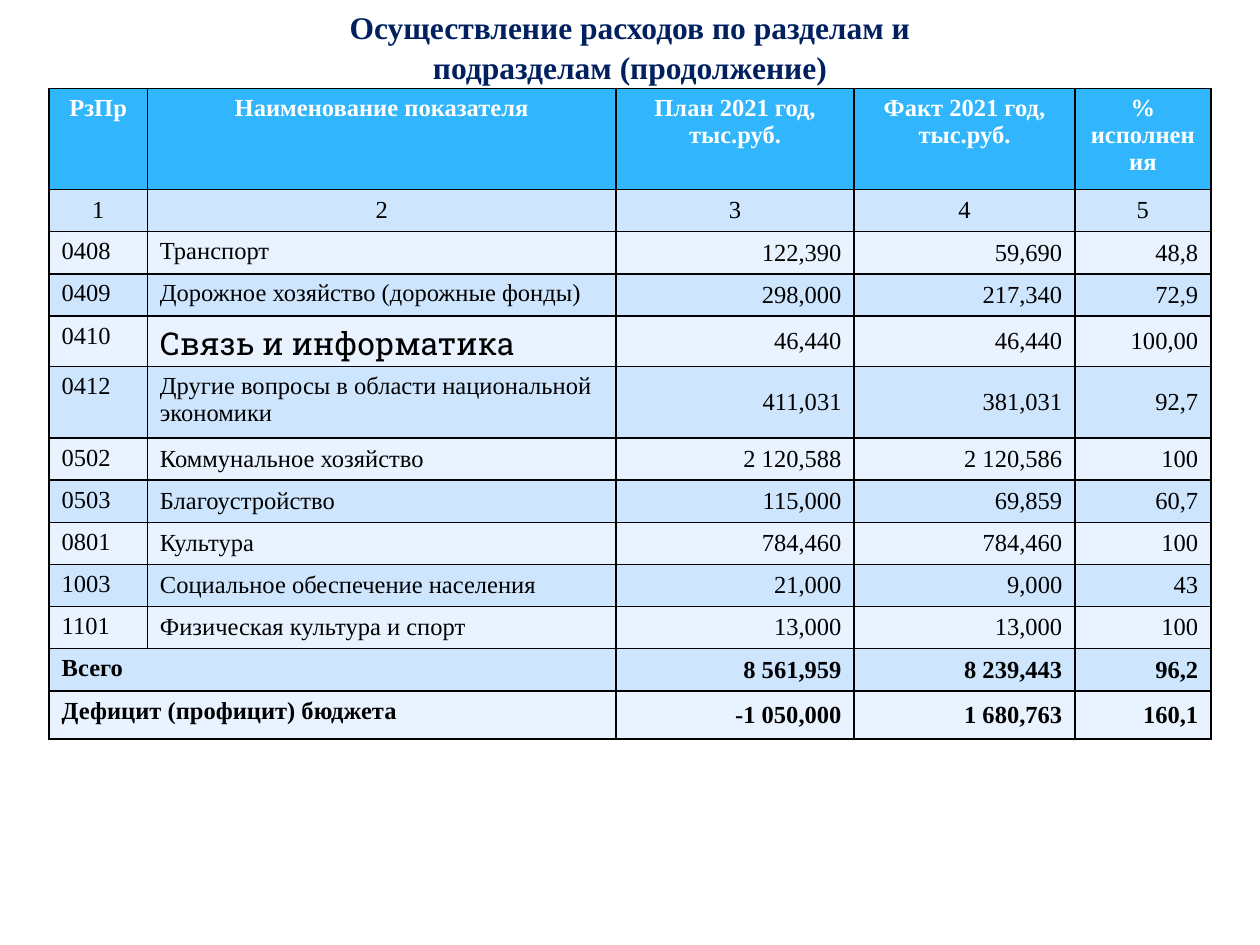
from dataclasses import dataclass

import pptx
import pptx.dml.color
import pptx.enum.text
import pptx.util
from lxml import etree
from pptx.oxml.ns import qn
from pptx.util import Cm, Pt

ALIGN = pptx.enum.text.PP_ALIGN
ANCHOR = pptx.enum.text.MSO_ANCHOR


@dataclass(frozen=True)
class Theme:
    title: str = "002060"
    header_fill: str = "31B6FD"
    header_text: str = "FFFFFF"
    band_dark: str = "CEE5FE"
    band_light: str = "E8F3FF"
    text: str = "000000"
    border: str = "000000"
    font: str = "Times New Roman"
    accent_font: str = "Roboto Slab"
    body_size: int = 14
    large_size: int = 18
    border_width: int = 1


THEME = Theme()

TITLE = "Осуществление расходов по разделам и подразделам (продолжение)"
HEADER = ("РзПр", "Наименование показателя", "План 2021 год, тыс.руб.",
          "Факт 2021 год, тыс.руб.", "% исполнения")
EXPENSES = [
    ("0408", "Транспорт", "122,390", "59,690", "48,8"),
    ("0409", "Дорожное хозяйство (дорожные фонды)", "298,000", "217,340", "72,9"),
    ("0410", "Связь и информатика", "46,440", "46,440", "100,00"),
    ("0412", "Другие вопросы в области национальной экономики",
     "411,031", "381,031", "92,7"),
    ("0502", "Коммунальное хозяйство", "2 120,588", "2 120,586", "100"),
    ("0503", "Благоустройство", "115,000", "69,859", "60,7"),
    ("0801", "Культура", "784,460", "784,460", "100"),
    ("1003", "Социальное обеспечение населения", "21,000", "9,000", "43"),
    ("1101", "Физическая культура и спорт", "13,000", "13,000", "100"),
]
TOTALS = [
    ("Всего", "", "8 561,959", "8 239,443", "96,2"),
    ("Дефицит (профицит) бюджета", "", "-1 050,000", "1 680,763", "160,1"),
]
COLUMN_WIDTHS = (1.98, 9.45, 4.8, 4.45, 2.74)
ROW_HEIGHT = 0.85
TALL_ROWS = {0: 2.04, 5: 1.44, 12: 0.97}
ACCENT_CODE = "0410"
FIRST_CENTRED_CODE = "0502"


def rgb(value):
    return pptx.dml.color.RGBColor.from_string(value)


def write(frame, text, *, size=THEME.body_size, font=THEME.font,
          color=THEME.text, bold=False, align=ALIGN.LEFT, spacing=None):
    paragraph = frame.paragraphs[0]
    paragraph.alignment = align
    paragraph.line_spacing = spacing
    run = paragraph.add_run()
    run.text = text
    run.font.size = Pt(size)
    run.font.name = font
    run.font.bold = bold
    run.font.color.rgb = rgb(color)


def set_borders(cell):
    properties = cell._tc.get_or_add_tcPr()
    for position, side in enumerate(("a:lnL", "a:lnR", "a:lnT", "a:lnB")):
        line = etree.Element(qn(side), w=str(Pt(THEME.border_width)))
        fill = etree.SubElement(line, qn("a:solidFill"))
        etree.SubElement(fill, qn("a:srgbClr"), val=THEME.border)
        properties.insert(position, line)


def fill_row(table, index, texts, fill, *, aligns, anchors, **text_format):
    for column, text in enumerate(texts):
        cell = table.cell(index, column)
        cell.fill.solid()
        cell.fill.fore_color.rgb = rgb(fill)
        set_borders(cell)
        cell.vertical_anchor = anchors[column]
        if text:
            accent = text_format
            if column == 1 and texts[0] == ACCENT_CODE:
                accent = dict(text_format, size=THEME.large_size,
                              font=THEME.accent_font)
            write(cell.text_frame, text, align=aligns[column], **accent)


def add_title(slide):
    title = slide.shapes.title
    title.left, title.top = Cm(6.35), Cm(0)
    title.width, title.height = Cm(12.7), Cm(1.8)
    frame = title.text_frame
    frame.word_wrap = True
    frame.auto_size = pptx.enum.text.MSO_AUTO_SIZE.SHAPE_TO_FIT_TEXT
    frame.vertical_anchor = ANCHOR.TOP
    write(frame, TITLE, size=THEME.large_size, color=THEME.title, bold=True,
          align=ALIGN.CENTER, spacing=1.05)


def add_expense_table(slide):
    row_count = 2 + len(EXPENSES) + len(TOTALS)
    heights = [TALL_ROWS.get(row, ROW_HEIGHT) for row in range(row_count)]
    table = slide.shapes.add_table(
        row_count, len(HEADER), Cm(0.99), Cm(1.78),
        Cm(sum(COLUMN_WIDTHS)), Cm(sum(heights))).table
    for column, width in zip(table.columns, COLUMN_WIDTHS):
        column.width = Cm(width)
    for row, height in zip(table.rows, heights):
        row.height = Cm(height)

    centred = [ALIGN.CENTER] * 5
    fill_row(table, 0, HEADER, THEME.header_fill, aligns=centred,
             anchors=[ANCHOR.TOP] * 5, color=THEME.header_text, bold=True)
    fill_row(table, 1, "12345", THEME.band_dark, aligns=centred,
             anchors=[ANCHOR.MIDDLE] * 5)

    aligns = [ALIGN.LEFT] * 2 + [ALIGN.RIGHT] * 3
    for index, texts in enumerate(EXPENSES + TOTALS, start=2):
        is_total = texts in TOTALS
        name_centred = not is_total and texts[0] >= FIRST_CENTRED_CODE
        anchors = [ANCHOR.TOP, ANCHOR.MIDDLE if name_centred else ANCHOR.TOP]
        fill_row(table, index, texts,
                 THEME.band_dark if index % 2 else THEME.band_light,
                 aligns=aligns, anchors=anchors + [ANCHOR.MIDDLE] * 3,
                 bold=is_total)
        if is_total:
            table.cell(index, 0).merge(table.cell(index, 1))


def main():
    presentation = pptx.Presentation()
    presentation.slide_width = Cm(25.4)
    presentation.slide_height = Cm(19.05)
    slide = presentation.slides.add_slide(presentation.slide_layouts[5])
    add_title(slide)
    add_expense_table(slide)
    presentation.save("out.pptx")


if __name__ == "__main__":
    main()
